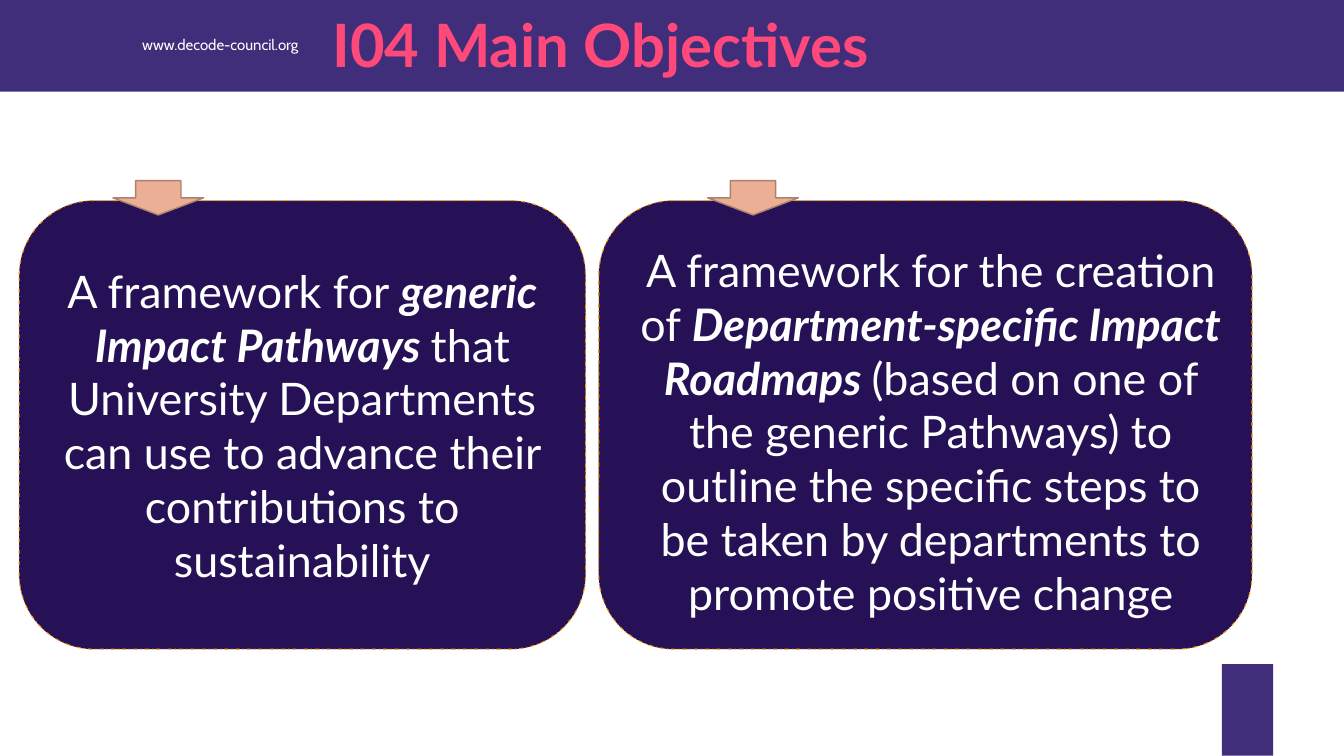
from pptx import Presentation
from pptx.dml.color import RGBColor
from pptx.enum.dml import MSO_LINE
from pptx.enum.shapes import MSO_SHAPE
from pptx.enum.text import MSO_ANCHOR, PP_ALIGN
from pptx.util import Pt

# Content: each objective is a list of (text, emphasised) parts
SITE = "www.decode-council.org"
TITLE = "I04 Main Objectives"
PATHWAYS = [
    ("A framework for ", False),
    ("generic Impact Pathways ", True),
    ("that University Departments can use to advance their "
     "contributions to sustainability", False),
]
ROADMAPS = [
    ("A framework for the creation of ", False),
    ("Department-specific Impact Roadmaps ", True),
    ("(based on one of the generic Pathways) to outline the specific steps "
     "to be taken by departments to promote positive change", False),
]

THEME = {
    "band": "402E7A", "card": "271156", "card_line": "FF9900",
    "arrow": "EAAF94", "arrow_line": "AD816D",
    "title": "FF497A", "text": "FEFFFF", "site": "FFFFFF",
    "font": "Lato", "site_font": "Cabin",
    "title_size": 42.7, "body_size": 32, "site_size": 10.7,
}

# Layout in points
W, H = 960, 540
BAND_H = 65.5
CARD_TOP, CARD_H = 143.3, 320.4
CARDS = [(13.7, 404.6), (427.7, 466.6)]  # left, width
ARROW_W, ARROW_H, ARROW_TOP = 64.8, 24.5, 129.1
ARROW_INSETS = [67, 77.8]  # from the left edge of each card

prs = Presentation()
prs.slide_width, prs.slide_height = Pt(W), Pt(H)
s = prs.slides.add_slide(prs.slide_layouts[6])


def color(name):
    return RGBColor.from_string(THEME[name])


def add_shape(kind, x, y, w, h, fill, line=None, line_width=1):
    sp = s.shapes.add_shape(kind, Pt(x), Pt(y), Pt(w), Pt(h))
    sp.shadow.inherit = False
    sp.fill.solid()
    sp.fill.fore_color.rgb = color(fill)
    if line:
        sp.line.color.rgb = color(line)
        sp.line.width = Pt(line_width)
    else:
        sp.line.fill.background()
    return sp


def add_box(x, y, w, h):
    tf = s.shapes.add_textbox(Pt(x), Pt(y), Pt(w), Pt(h)).text_frame
    tf.word_wrap = True
    return tf


def style(font, name, size, fill, bold=False, italic=False):
    font.name, font.size = THEME[name], Pt(THEME[size])
    font.color.rgb = color(fill)
    font.bold, font.italic = bold, italic


def write_objective(tf, parts):
    p = tf.paragraphs[0]
    p.alignment = PP_ALIGN.CENTER
    for text, strong in parts:
        r = p.add_run()
        r.text = text
        style(r.font, "font", "body_size", "text", strong, strong)


# Header band and corner block
add_shape(MSO_SHAPE.RECTANGLE, 0, 0, W, BAND_H, "band")
add_shape(MSO_SHAPE.RECTANGLE, 872.8, 474.3, 36.7, BAND_H, "band")

# Site address and title
tf = add_box(94.5, 21.6, 205, 20.2)
tf.text = SITE
style(tf.paragraphs[0].runs[0].font, "site_font", "site_size", "site")
tf = add_box(230.4, 2.2, 431.3, 59)
tf.text = TITLE
style(tf.paragraphs[0].runs[0].font, "font", "title_size", "title", bold=True)

# Cards with an arrow on the top edge
cards = []
for (x, w), inset in zip(CARDS, ARROW_INSETS):
    card = add_shape(MSO_SHAPE.ROUNDED_RECTANGLE, x, CARD_TOP, w, CARD_H,
                     "card", "card_line", 0.75)
    card.line.dash_style = MSO_LINE.DASH_DOT
    cards.append(card)
    add_shape(MSO_SHAPE.DOWN_ARROW, x + inset, ARROW_TOP, ARROW_W, ARROW_H,
              "arrow", "arrow_line")

# Objectives: the longer one has its own, wider text box
tf = cards[0].text_frame
tf.word_wrap = True
tf.vertical_anchor = MSO_ANCHOR.MIDDLE
tf.margin_left = tf.margin_right = Pt(9.4)
tf.margin_top = tf.margin_bottom = Pt(5)
write_objective(tf, PATHWAYS)
write_objective(add_box(445.7, 169.9, 438.5, 278.6), ROADMAPS)

prs.save("out.pptx")
